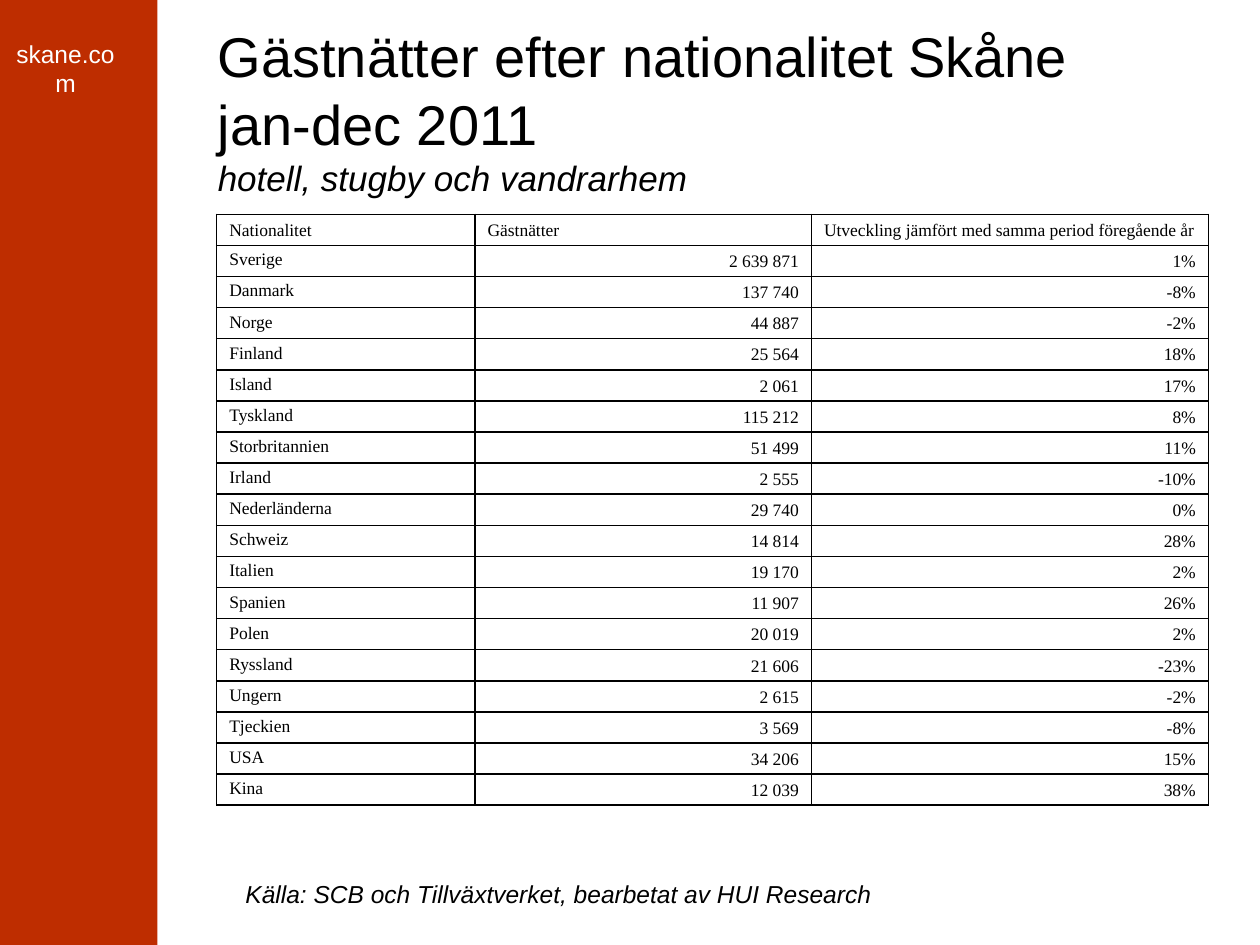
from typing import NamedTuple

from lxml import etree
from pptx import Presentation
from pptx import util as u
from pptx.dml.color import RGBColor
from pptx.enum import shapes, text
from pptx.oxml import ns

WIDE, HIGH = u.Inches(10), u.Inches(7.5)
BLACK, WHITE, RUST = "000000", "FFFFFF", "BE2D00"
LEFT, MID, RIGHT = text.PP_ALIGN.LEFT, text.PP_ALIGN.CENTER, text.PP_ALIGN.RIGHT
TOP, LOW = text.MSO_ANCHOR.TOP, text.MSO_ANCHOR.BOTTOM


class Box(NamedTuple):
    """Place and size in percent of the slide's width and height."""
    x: float
    y: float
    w: float
    h: float

    def emu(self) -> list[int]:
        sides = (WIDE, HIGH, WIDE, HIGH)
        return [round(part * side / 100) for part, side in zip(self, sides)]


class Guest(NamedTuple):
    land: str
    nights: str
    change: str


HEAD = Guest("Nationalitet", "Gästnätter",
             "Utveckling jämfört med samma period föregående år")
GUESTS = [
    Guest("Sverige", "2 639 871", "1%"),
    Guest("Danmark", "137 740", "-8%"),
    Guest("Norge", "44 887", "-2%"),
    Guest("Finland", "25 564", "18%"),
    Guest("Island", "2 061", "17%"),
    Guest("Tyskland", "115 212", "8%"),
    Guest("Storbritannien", "51 499", "11%"),
    Guest("Irland", "2 555", "-10%"),
    Guest("Nederländerna", "29 740", "0%"),
    Guest("Schweiz", "14 814", "28%"),
    Guest("Italien", "19 170", "2%"),
    Guest("Spanien", "11 907", "26%"),
    Guest("Polen", "20 019", "2%"),
    Guest("Ryssland", "21 606", "-23%"),
    Guest("Ungern", "2 615", "-2%"),
    Guest("Tjeckien", "3 569", "-8%"),
    Guest("USA", "34 206", "15%"),
    Guest("Kina", "12 039", "38%"),
]
COLS = (20.5, 26.7, 31.5)
GRID = Box(17.2, 22.67, sum(COLS), 62.3)


def tint(code: str) -> RGBColor:
    return RGBColor.from_string(code)


def write(para, words: str, *, size: float, face="Arial", color=BLACK,
          slant=False, align=LEFT) -> None:
    """Add words to a paragraph; each newline becomes a line break."""
    para.alignment = align
    for i, line in enumerate(words.split("\n")):
        if i:
            para.add_line_break()
        if line:
            run = para.add_run()
            run.text = line
            run.font.size = u.Pt(size)
            run.font.name = face
            run.font.italic = slant
            run.font.color.rgb = tint(color)


def frame(slide, box: Box, anchor=TOP):
    body = slide.shapes.add_textbox(*box.emu()).text_frame
    body.word_wrap = True
    body.vertical_anchor = anchor
    return body


def rule(cell, color=BLACK, width=1) -> None:
    """Draw all four borders of a cell, ahead of its fill."""
    props = cell._tc.get_or_add_tcPr()
    for i, side in enumerate(("lnL", "lnR", "lnT", "lnB")):
        line = etree.Element(ns.qn(f"a:{side}"), w=str(u.Pt(width)))
        fill = etree.SubElement(line, ns.qn("a:solidFill"))
        etree.SubElement(fill, ns.qn("a:srgbClr"), val=color)
        props.insert(i, line)


def draw_cell(cell, words: str, row: int, col: int) -> None:
    cell.fill.background()
    cell.margin_left = cell.margin_right = u.Inches(0.1)
    cell.margin_top = cell.margin_bottom = u.Inches(0.04)
    cell.vertical_anchor = TOP if row and not col else LOW
    write(cell.text_frame.paragraphs[0], words, size=10,
          face="Times New Roman", align=RIGHT if row and col else LEFT)
    rule(cell)


def draw_table(slide) -> None:
    data = [HEAD, *GUESTS]
    table = slide.shapes.add_table(len(data), len(COLS), *GRID.emu()).table
    table.first_row = table.horz_banding = False
    for col, share in zip(table.columns, COLS):
        col.width = round(WIDE * share / 100)
    for r, guest in enumerate(data):
        table.rows[r].height = round(HIGH * GRID.h / 100 / len(data))
        for c, words in enumerate(guest):
            draw_cell(table.cell(r, c), words, r, c)


def draw_band(slide) -> None:
    band = slide.shapes.add_shape(shapes.MSO_SHAPE.RECTANGLE,
                                  *Box(0, 0, 12.5, 100).emu())
    band.shadow.inherit = False
    band.fill.solid()
    band.fill.fore_color.rgb = tint(RUST)
    band.line.fill.background()
    site = frame(slide, Box(0.5, 3.47, 11.4, 4.4))
    site.margin_left, site.margin_right = u.Inches(0.06), u.Inches(0.26)
    write(site.paragraphs[0], "skane.com", size=14, color=WHITE, align=MID)


def main() -> None:
    deck = Presentation()
    deck.slide_width, deck.slide_height = WIDE, HIGH
    slide = deck.slides.add_slide(deck.slide_layouts[6])
    draw_band(slide)
    title = frame(slide, Box(16.3, 3.33, 79.9, 16.67),
                  text.MSO_ANCHOR.MIDDLE).paragraphs[0]
    write(title, "Gästnätter efter nationalitet Skåne\njan-dec 2011\n", size=32)
    write(title, "hotell, stugby och vandrarhem", size=20, slant=True)
    source = frame(slide, Box(18.5, 92.4, 68.3, 4.4)).paragraphs[0]
    write(source, "Källa: SCB och Tillväxtverket, bearbetat av HUI Research",
          size=14, slant=True)
    draw_table(slide)
    deck.save("out.pptx")


if __name__ == "__main__":
    main()
